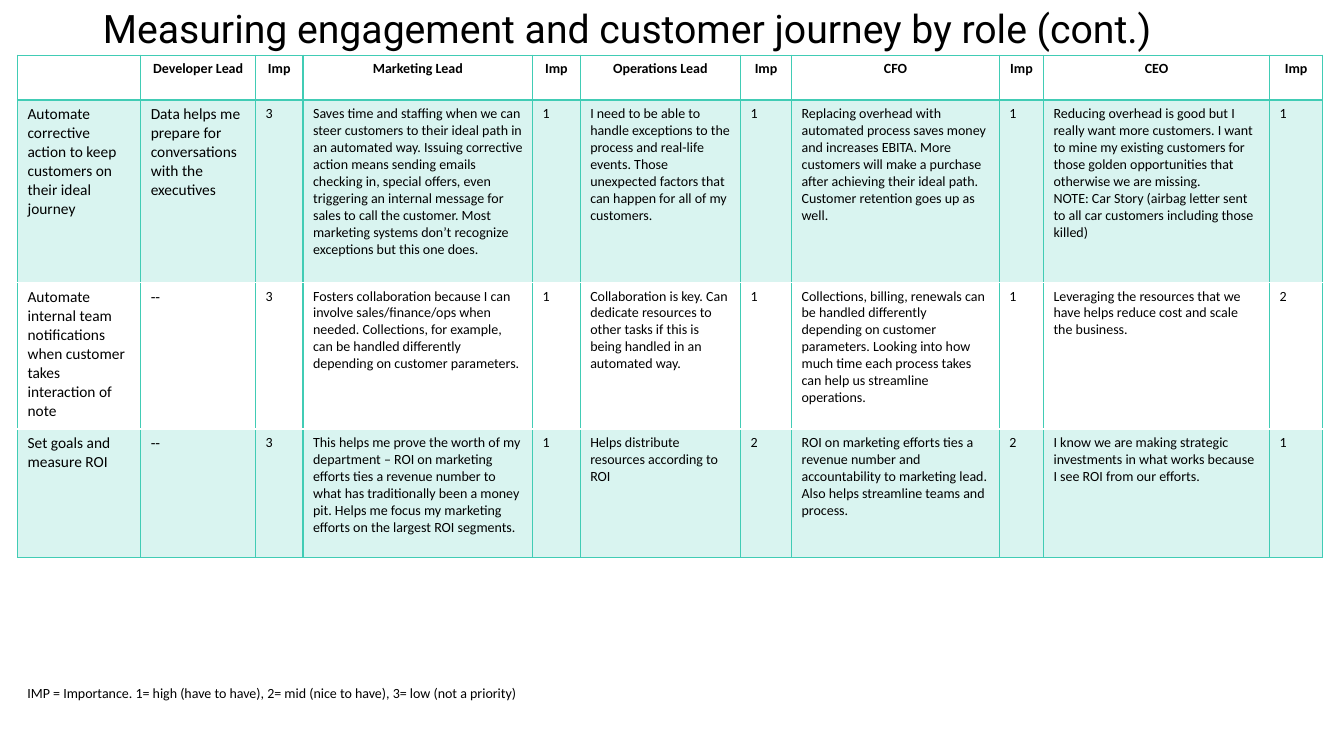
from lxml import etree
from pptx import Presentation
from pptx.dml.color import RGBColor
from pptx.enum.text import MSO_ANCHOR as Anchor, PP_ALIGN as Align
from pptx.oxml.ns import qn
from pptx.util import Pt

COLORS = {"ink": "000000", "teal": "41CCB5"}
TINT_ALPHA = "20000"

COLUMN_WIDTHS = [88, 82, 34, 164, 34, 114.5, 36.5, 148.5, 31.5, 161.5, 38]
ROW_HEIGHTS = [32, 130.5, 104.5, 92]
ROLE_HEADERS = ["", "Developer Lead", "Imp", "Marketing Lead", "Imp", "Operations Lead",
                "Imp", "CFO", "Imp", "CEO", "Imp"]
CAPABILITIES = [
    ["Automate corrective action to keep customers on their ideal journey",
     "Data helps me prepare for conversations with the executives", "3",
     "Saves time and staffing when we can steer customers to their ideal path in an "
     "automated way. Issuing corrective action means sending emails checking in, special "
     "offers, even triggering an internal message for sales to call the customer. Most "
     "marketing systems don’t recognize exceptions but this one does.", "1",
     "I need to be able to handle exceptions to the process and real-life events. Those "
     "unexpected factors that can happen for all of my customers.", "1",
     "Replacing overhead with automated process saves money and increases EBITA. More "
     "customers will make a purchase after achieving their ideal path. Customer retention "
     "goes up as well.", "1",
     "Reducing overhead is good but I really want more customers. I want to mine my "
     "existing customers for those golden opportunities that otherwise we are missing.\v"
     "NOTE: Car Story (airbag letter sent to all car customers including those killed)", "1"],
    ["Automate internal team notifications when customer takes interaction of note",
     "--", "3",
     "Fosters collaboration because I can involve sales/finance/ops when needed. "
     "Collections, for example, can be handled differently depending on customer "
     "parameters.", "1",
     "Collaboration is key. Can dedicate resources to other tasks if this is being "
     "handled in an automated way.", "1",
     "Collections, billing, renewals can be handled differently depending on customer "
     "parameters. Looking into how much time each process takes can help us streamline "
     "operations.", "1",
     "Leveraging the resources that we have helps reduce cost and scale the business.", "2"],
    ["Set goals and measure ROI", "--", "3",
     "This helps me prove the worth of my department – ROI on marketing efforts ties a "
     "revenue number to what has traditionally been a money pit. Helps me focus my "
     "marketing efforts on the largest ROI segments.", "1",
     "Helps distribute resources according to ROI", "2",
     "ROI on marketing efforts ties a revenue number and accountability to marketing "
     "lead. Also helps streamline teams and process.", "2",
     "I know we are making strategic investments in what works because I see ROI from "
     "our efforts.", "1"],
]


class SlideBuilder:
    def __init__(self, slide, font):
        self.slide = slide
        self.font = font

    def set_text(self, frame, text, size, font=None, bold=False, align=Align.LEFT):
        frame.text = text
        for paragraph in frame.paragraphs:
            paragraph.alignment = align
            for style in [paragraph.font] + [run.font for run in paragraph.runs]:
                style.name = font or self.font
                style.size = Pt(size)
                style.bold = bold
                style.color.rgb = RGBColor.from_string(COLORS["ink"])

    def text(self, left, top, width, height, text, size, font=None,
             anchor=Anchor.TOP, spacing=1.0):
        box = self.slide.shapes.add_textbox(Pt(left), Pt(top), Pt(width), Pt(height))
        frame = box.text_frame
        frame.word_wrap = True
        frame.vertical_anchor = anchor
        self.set_text(frame, text, size, font)
        frame.paragraphs[0].line_spacing = spacing

    def border(self, cell, side, width):
        line = etree.SubElement(cell._tc.get_or_add_tcPr(), qn("a:ln" + side),
                                w=str(int(Pt(width))))
        fill = etree.SubElement(line, qn("a:solidFill"))
        etree.SubElement(fill, qn("a:srgbClr"), val=COLORS["teal"])

    def tint(self, cell):
        """Fill the cell with translucent teal."""
        cell.fill.solid()
        cell.fill.fore_color.rgb = RGBColor.from_string(COLORS["teal"])
        color = cell._tc.tcPr.find(qn("a:solidFill")).find(qn("a:srgbClr"))
        etree.SubElement(color, qn("a:alpha"), val=TINT_ALPHA)

    def table(self, left, top, widths, heights, rows):
        frame = self.slide.shapes.add_table(len(rows), len(widths), Pt(left), Pt(top),
                                            Pt(sum(widths)), Pt(sum(heights)))
        table = frame.table
        table.first_row = table.horz_banding = False
        for column, width in zip(table.columns, widths):
            column.width = Pt(width)
        for r, (height, texts) in enumerate(zip(heights, rows)):
            table.rows[r].height = Pt(height)
            header = r == 0
            for c, text in enumerate(texts):
                cell = table.cell(r, c)
                self.set_text(cell.text_frame, text, 11 if c < 2 and not header else 10,
                              bold=header, align=Align.CENTER if header else Align.LEFT)
                for side in "LRTB" if header else "LRB":
                    self.border(cell, side, 2 if header and side == "B" else 1)
                if r % 2:
                    self.tint(cell)
                else:
                    cell.fill.background()


def main():
    deck = Presentation()
    deck.slide_width, deck.slide_height = Pt(960), Pt(540)
    builder = SlideBuilder(deck.slides.add_slide(deck.slide_layouts[6]), "Calibri")
    builder.table(12.5, 39.5, COLUMN_WIDTHS, ROW_HEIGHTS, [ROLE_HEADERS] + CAPABILITIES)
    builder.text(66.5, -2, 828, 48,
                 "Measuring engagement and customer journey by role (cont.)",
                 28, font="Roboto", anchor=Anchor.MIDDLE, spacing=0.9)
    builder.text(12.5, 485.5, 400, 19.5,
                 "IMP = Importance. 1= high (have to have), 2= mid (nice to have), "
                 "3= low (not a priority)", 10)
    deck.save("out.pptx")


if __name__ == "__main__":
    main()
